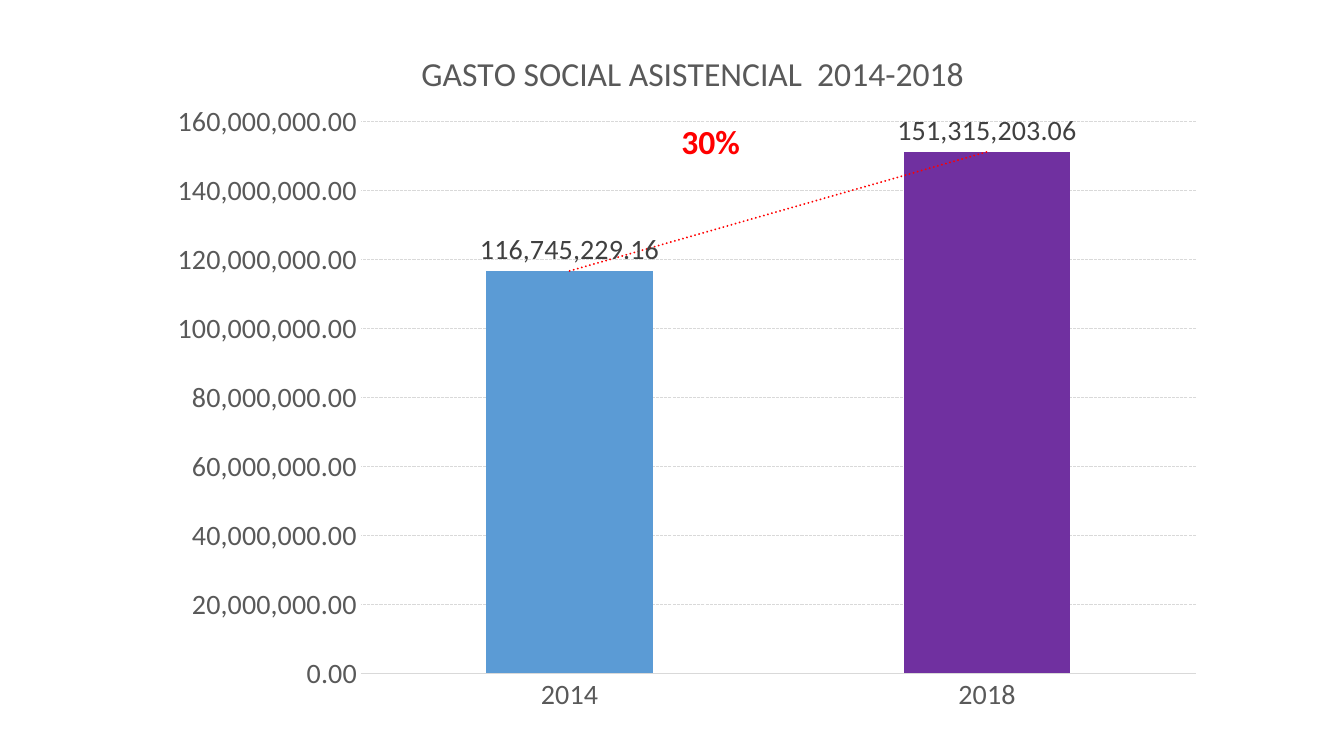
from lxml.etree import SubElement
from pptx import Presentation
from pptx.chart.data import CategoryChartData
from pptx.dml.color import RGBColor
from pptx.enum.chart import XL_CHART_TYPE, XL_LABEL_POSITION, XL_TICK_MARK
from pptx.enum.dml import MSO_LINE
from pptx.oxml import parse_xml
from pptx.oxml.ns import nsdecls, qn
from pptx.util import Inches, Pt

FONT = "Calibri"
BLUE = RGBColor(0x5B, 0x9B, 0xD5)
PURPLE = RGBColor(0x70, 0x30, 0xA0)
RED = RGBColor(0xFF, 0x00, 0x00)
GREY = RGBColor(0x59, 0x59, 0x59)
DARK_GREY = RGBColor(0x40, 0x40, 0x40)
LIGHT_GREY = RGBColor(0xD9, 0xD9, 0xD9)
AMOUNT_FORMAT = "#,##0.00"
SPENDING = {"2014": 116745229.16, "2018": 151315203.06}


def style_font(font, size, color, bold=False):
    font.name = FONT
    font.size = Pt(size)
    font.bold = bold
    font.color.rgb = color


def set_layout(parent, **fractions):
    """Place a chart part by fractions of the chart area."""
    for old in parent.findall(qn("c:layout")):
        parent.remove(old)
    layout = parse_xml(f"<c:layout {nsdecls('c')}/>")
    manual = SubElement(layout, qn("c:manualLayout"))
    if "w" in fractions:
        SubElement(manual, qn("c:layoutTarget")).set("val", "inner")
    for mode in ("xMode", "yMode"):
        SubElement(manual, qn(f"c:{mode}")).set("val", "edge")
    for side, fraction in fractions.items():
        SubElement(manual, qn(f"c:{side}")).set("val", str(fraction))
    text = parent.find(qn("c:tx"))
    if text is None:
        parent.insert(0, layout)
    else:
        text.addnext(layout)


def add_trendline(series):
    trendline = parse_xml(
        f'<c:trendline {nsdecls("c", "a")}><c:spPr><a:ln w="{Pt(1.5)}" cap="rnd">'
        f'<a:solidFill><a:srgbClr val="{RED}"/></a:solidFill>'
        '<a:prstDash val="sysDot"/></a:ln></c:spPr>'
        '<c:trendlineType val="linear"/><c:dispRSqr val="0"/>'
        '<c:dispEq val="0"/></c:trendline>')
    series._element.find(qn("c:cat")).addprevious(trendline)


def style_axes(chart):
    years, amounts = chart.category_axis, chart.value_axis
    for axis in (years, amounts):
        axis.major_tick_mark = axis.minor_tick_mark = XL_TICK_MARK.NONE
        style_font(axis.tick_labels.font, 20, GREY)
    years.format.line.color.rgb = LIGHT_GREY
    years.format.line.width = Pt(0.75)

    amounts.minimum_scale = 0
    amounts.maximum_scale = 160_000_000
    amounts.major_unit = 20_000_000
    amounts.tick_labels.number_format = AMOUNT_FORMAT
    amounts.tick_labels.number_format_is_linked = False
    amounts.format.line.fill.background()
    grid = amounts.major_gridlines.format.line
    grid.color.rgb = LIGHT_GREY
    grid.width = Pt(0.75)
    grid.dash_style = MSO_LINE.SQUARE_DOT


def add_spending_chart(slide, left, top, width, height):
    spending = CategoryChartData(number_format=AMOUNT_FORMAT)
    spending.categories = list(SPENDING)
    spending.add_series("Series 1", list(SPENDING.values()))
    chart = slide.shapes.add_chart(
        XL_CHART_TYPE.COLUMN_CLUSTERED, Inches(left), Inches(top),
        Inches(width), Inches(height), spending).chart
    chart.has_legend = False
    chart.font.name = FONT
    chart.font.size = Pt(10)

    # Chart title
    heading = chart.chart_title.text_frame
    heading.text = "GASTO SOCIAL ASISTENCIAL  2014-2018"
    style_font(heading.paragraphs[0].font, 24, GREY)
    set_layout(chart.chart_title._element, x=2.56 / width, y=0.25 / height)

    style_axes(chart)

    # Columns, value labels and trend
    plot = chart.plots[0]
    plot.gap_width = 150
    plot.vary_by_categories = False
    series = plot.series[0]
    series.invert_if_negative = False
    for index, color in enumerate((BLUE, PURPLE)):
        fill = series.points[index].format.fill
        fill.solid()
        fill.fore_color.rgb = color
    series.format.fill.solid()
    series.format.fill.fore_color.rgb = BLUE
    labels = series.data_labels
    labels.show_value = True
    labels.number_format = AMOUNT_FORMAT
    labels.number_format_is_linked = False
    labels.position = XL_LABEL_POSITION.OUTSIDE_END
    style_font(labels.font, 20, DARK_GREY)
    add_trendline(series)

    # Plot area, in inches within the chart
    set_layout(plot._element.getparent(), x=2.02 / width, y=1.01 / height,
               w=8.28 / width, h=5.47 / height)


def add_growth_note(slide, left, top, width, height):
    growth = slide.shapes.add_textbox(
        Inches(left), Inches(top), Inches(width), Inches(height)).text_frame
    growth.word_wrap = True
    growth.text = "30%"
    style_font(growth.paragraphs[0].font, 24, RED, bold=True)


def main():
    deck = Presentation()
    deck.slide_width, deck.slide_height = Inches(13.33), Inches(7.5)
    slide = deck.slides.add_slide(deck.slide_layouts[6])
    add_spending_chart(slide, 1.56, 0.2, 10.52, 7)
    add_growth_note(slide, 6.66, 1.15, 1.33, 0.5)
    deck.save("out.pptx")


if __name__ == "__main__":
    main()
